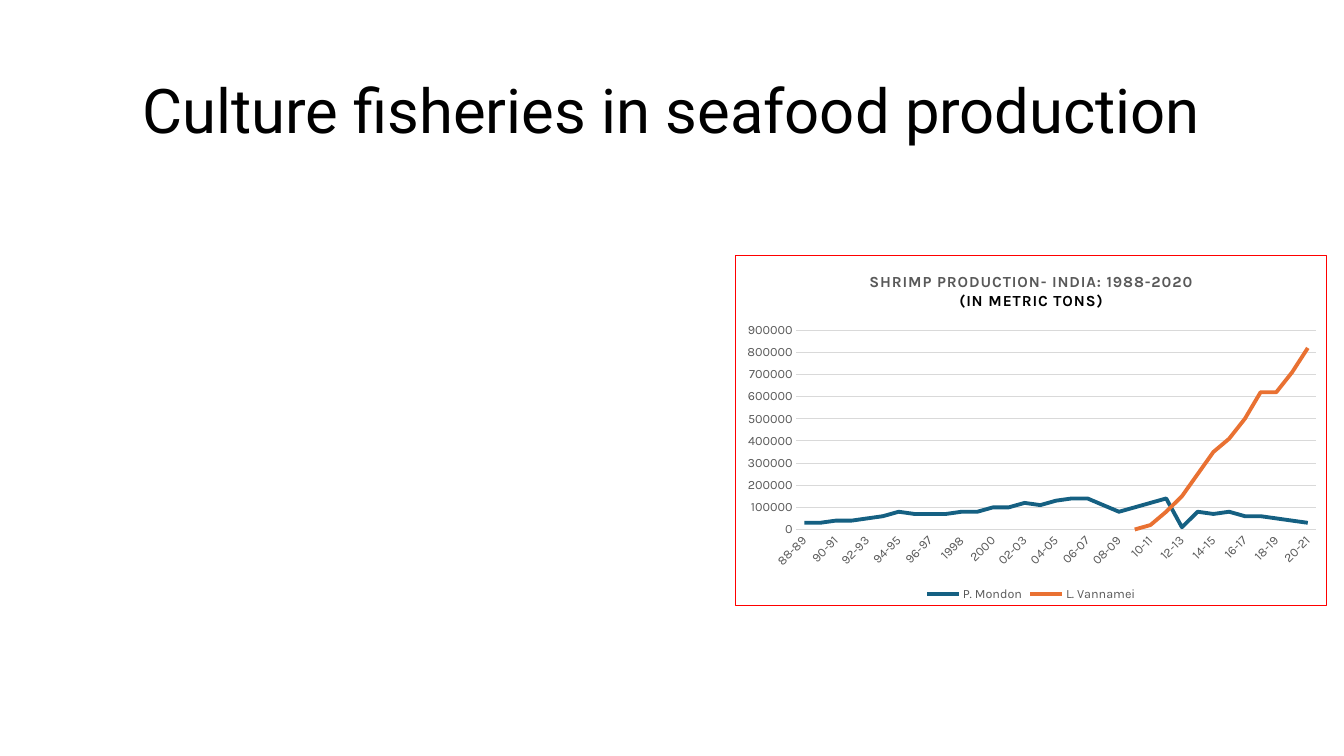
from lxml.etree import SubElement
from pptx import Presentation
from pptx.chart.data import CategoryChartData
from pptx.dml.color import RGBColor
from pptx.enum.chart import XL_CHART_TYPE, XL_LEGEND_POSITION, XL_TICK_MARK
from pptx.enum.text import MSO_ANCHOR, PP_ALIGN
from pptx.oxml import parse_xml
from pptx.oxml.ns import nsdecls, qn
from pptx.util import Pt

TITLE = "Culture fisheries in seafood production"
CHART_TITLE = [("SHRIMP PRODUCTION- INDIA: 1988-2020", "muted"),
               ("(IN METRIC TONS)", "ink")]
YEARS = ["88-89", "89-90", "90-91", "91-92", "92-93", "93-94", "94-95", "95-96",
         "96-97", "1997", "1998", "1999", "2000", "01-02", "02-03", "03-04",
         "04-05", "05-06", "06-07", "07-08", "08-09", "09-10", "10-11", "11-12",
         "12-13", "13-14", "14-15", "15-16", "16-17", "17-18", "18-19", "19-20",
         "20-21"]
MONDON = [30000, 30000, 40000, 40000, 50000, 60000, 80000, 70000, 70000, 70000,
          80000, 80000, 100000, 100000, 120000, 110000, 130000, 140000, 140000,
          110000, 80000, 100000, 120000, 140000, 10000, 80000, 70000, 80000,
          60000, 60000, 50000, 40000, 30000]
VANNAMEI = [0, 20000, 80000, 150000, 250000, 350000, 410000, 500000, 620000,
            620000, 710000, 820000]
SERIES = [("P. Mondon", MONDON, "mondon"), ("L. Vannamei", VANNAMEI, "vannamei")]

THEME = {
    "color": {"ink": "000000", "muted": "595959", "grid": "D9D9D9", "paper": "FFFFFF",
              "border": "FF0000", "mondon": "156082", "vannamei": "E97132"},
    "font": {"title": "Roboto", "chart": "Karla"},
    "size": {"title": 44, "chart": 10, "chart title": 11, "label": 9},
}
SLIDE = (960, 540)
TITLE_BOX = (66, 28.8, 828, 104.4)
CHART_BOX = (525, 182.4, 423.2, 250.4)
PLOT = {"x": 0.103, "y": 0.213, "w": 0.878, "h": 0.57}  # fractions of the chart


def color(name):
    return RGBColor.from_string(THEME["color"][name])


def set_font(font, face, size, ink, bold=False):
    font.name = THEME["font"][face]
    font.size = Pt(THEME["size"][size])
    font.color.rgb = color(ink)
    font.bold = bold


def set_line(line, ink, width):
    line.color.rgb = color(ink)
    line.width = Pt(width)


def add_title(s):
    tf = s.shapes.add_textbox(*map(Pt, TITLE_BOX)).text_frame
    tf.word_wrap = True
    tf.vertical_anchor = MSO_ANCHOR.MIDDLE
    tf.text = TITLE
    p = tf.paragraphs[0]
    p.alignment = PP_ALIGN.CENTER
    p.line_spacing = 0.9
    set_font(p.runs[0].font, "title", "title", "ink")


def add_production_chart(s):
    data = CategoryChartData()
    data.categories = YEARS
    for name, values, _ in SERIES:
        data.add_series(name, [None] * (len(YEARS) - len(values)) + values)
    chart = s.shapes.add_chart(XL_CHART_TYPE.LINE, *map(Pt, CHART_BOX), data).chart
    set_font(chart.font, "chart", "chart", "ink")
    for series, (_, _, ink) in zip(chart.plots[0].series, SERIES):
        series.smooth = False
        set_line(series.format.line, ink, 2.75)
    chart.plots[0].vary_by_categories = False
    style_title(chart)
    style_axes(chart)
    chart.has_legend = True
    chart.legend.position = XL_LEGEND_POSITION.BOTTOM
    chart.legend.include_in_layout = False
    set_font(chart.legend.font, "chart", "label", "muted")
    place_plot(chart)
    frame_chart(chart)


def style_title(chart):
    chart.has_title = True
    tf = chart.chart_title.text_frame
    tf.text = "\n".join(line for line, _ in CHART_TITLE)
    for p, (_, ink) in zip(tf.paragraphs, CHART_TITLE):
        set_font(p.runs[0].font, "chart", "chart title", ink, bold=True)
        p.runs[0].font._element.set("spc", "50")


def style_axes(chart):
    years, tons = chart.category_axis, chart.value_axis
    for axis in (years, tons):
        axis.major_tick_mark = axis.minor_tick_mark = XL_TICK_MARK.NONE
        set_font(axis.tick_labels.font, "chart", "label", "muted")
    set_line(years.format.line, "grid", 1)
    years._element.find(qn("c:txPr")).find(qn("a:bodyPr")).set("rot", "-2700000")
    tons.format.line.fill.background()
    tons.minimum_scale, tons.maximum_scale, tons.major_unit = 0, 900000, 100000
    set_line(tons.major_gridlines.format.line, "grid", 0.75)


def place_plot(chart):
    area = chart._chartSpace.chart.plotArea
    for old in area.findall(qn("c:layout")):
        area.remove(old)
    layout = parse_xml(f"<c:layout {nsdecls('c')}/>")
    manual = SubElement(layout, qn("c:manualLayout"))
    settings = {"layoutTarget": "inner", "xMode": "edge", "yMode": "edge", **PLOT}
    for tag, value in settings.items():
        SubElement(manual, qn(f"c:{tag}")).set("val", str(value))
    area.insert(0, layout)


def frame_chart(chart):
    """Fill and outline the chart area."""
    chart._chartSpace.chart.addnext(parse_xml(
        f"<c:spPr {nsdecls('c', 'a')}>"
        f"<a:solidFill><a:srgbClr val='{THEME['color']['paper']}'/></a:solidFill>"
        f"<a:ln w='{Pt(0.75)}'><a:solidFill>"
        f"<a:srgbClr val='{THEME['color']['border']}'/></a:solidFill></a:ln></c:spPr>"))


prs = Presentation()
prs.slide_width, prs.slide_height = map(Pt, SLIDE)
s = prs.slides.add_slide(prs.slide_layouts[6])
add_title(s)
add_production_chart(s)
prs.save("out.pptx")
